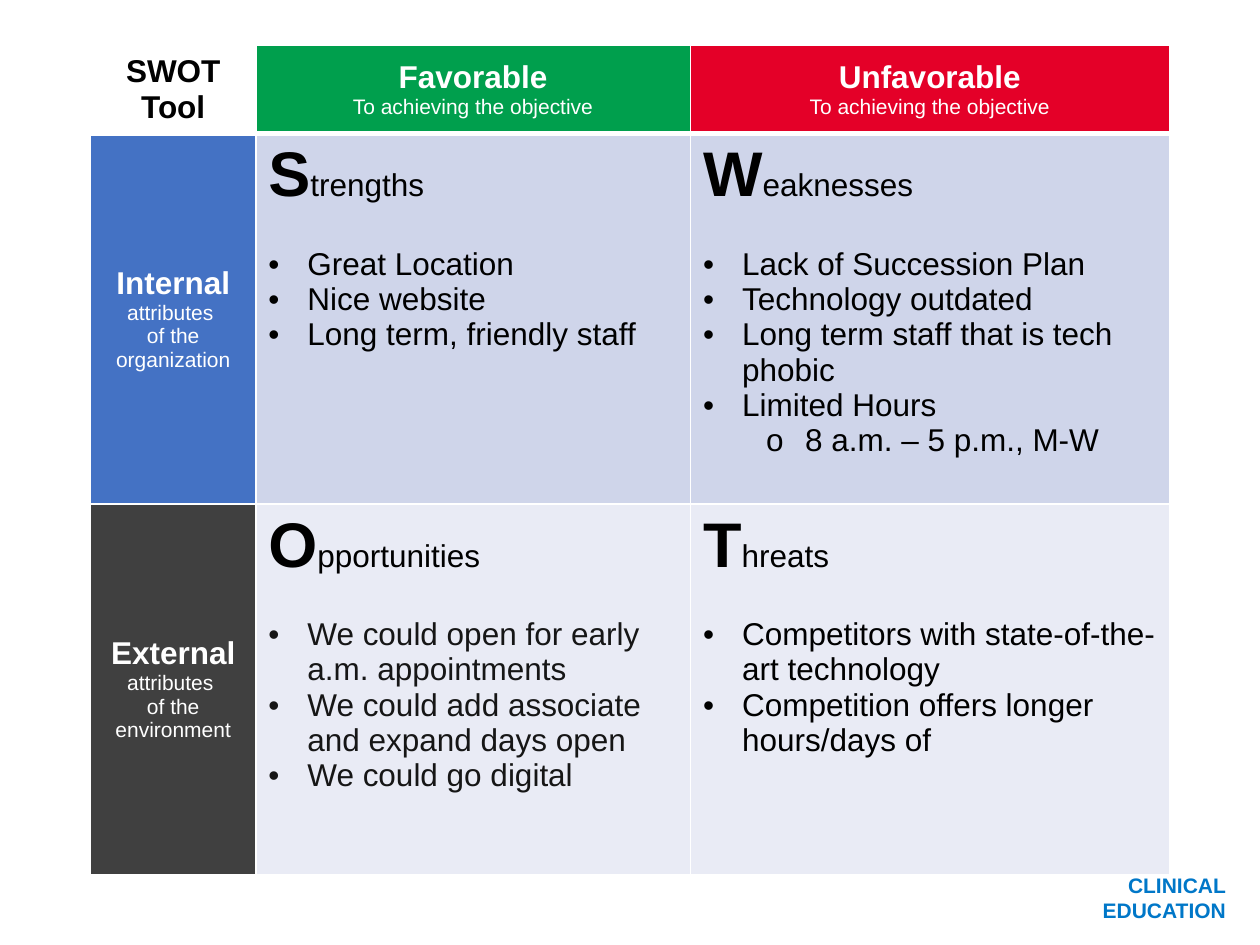
from lxml import etree
from pptx import Presentation
from pptx.dml.color import RGBColor
from pptx.enum.text import MSO_ANCHOR, PP_ALIGN
from pptx.oxml.ns import qn
from pptx.util import Inches, Pt

CENTER, RIGHT = PP_ALIGN.CENTER, PP_ALIGN.RIGHT
MIDDLE = MSO_ANCHOR.MIDDLE
BLANK_LAYOUT = 6
FONT = "Arial"
COLORS = {
    "white": "FFFFFF", "black": "000000", "ink": "161616",
    "green": "009F4D", "red": "E40028", "blue": "4472C4", "gray": "404040",
    "internal": "CFD5EA", "external": "E9EBF5", "footer": "0077C8",
}
COLUMN_WIDTHS = [1.31, 3.45, 3.8]
ROW_HEIGHTS = [0.68, 2.94, 2.94]
HEADERS = [
    (0, 1, "Favorable", "To achieving the objective", "green"),
    (0, 2, "Unfavorable", "To achieving the objective", "red"),
    (1, 0, "Internal", "attributes \vof the organization", "blue"),
    (2, 0, "External", "attributes \vof the environment", "gray"),
]
QUADRANTS = [
    (1, 1, "Strengths", "internal", "black", [
        (0, "Great Location"),
        (0, "Nice website"),
        (0, "Long term, friendly staff"),
    ]),
    (1, 2, "Weaknesses", "internal", "black", [
        (0, "Lack of Succession Plan"),
        (0, "Technology outdated"),
        (0, "Long term staff that is tech phobic"),
        (0, "Limited Hours"),
        (1, "8 a.m. – 5 p.m., M-W"),
    ]),
    (2, 1, "Opportunities", "external", "ink", [
        (0, "We could open for early a.m. appointments"),
        (0, "We could add associate and expand days open"),
        (0, "We could go digital"),
    ]),
    (2, 2, "Threats", "external", "black", [
        (0, "Competitors with state-of-the-art technology"),
        (0, "Competition offers longer hours/days of"),
    ]),
]


def rgb(name):
    """Return the named color."""
    return RGBColor.from_string(COLORS[name])


def format_run(run, size, color, bold=False):
    """Set the font of a run."""
    run.font.name = FONT
    run.font.size = Pt(size)
    run.font.bold = bold
    run.font.color.rgb = rgb(color)


def write_paragraph(paragraph, text, size, color, bold=False, align=None):
    """Fill a paragraph and format its runs and line breaks."""
    paragraph.text = text
    paragraph.alignment = align
    for run in paragraph.runs:
        format_run(run, size, color, bold)
    for line_break in paragraph._p.findall(qn("a:br")):
        etree.SubElement(line_break, qn("a:rPr"), sz=str(size * 100))


def add_bullet(paragraph, level):
    """Give a paragraph a hanging bullet for its level."""
    paragraph.level = level
    properties = paragraph._p.get_or_add_pPr()
    properties.set("marL", str(Inches(0.31 + 0.5 * level)))
    properties.set("indent", str(-Inches(0.31)))
    etree.SubElement(properties, qn("a:buFont"), typeface=FONT)
    etree.SubElement(properties, qn("a:buChar"), char="•o"[level])


def style_cell(cell, row):
    """Draw white borders, thicker below the header row."""
    properties = cell._tc.get_or_add_tcPr()
    widths = {"L": 1, "R": 1, "T": 3 if row == 1 else 1, "B": 3 if row == 0 else 1}
    for side, width in widths.items():
        line = etree.SubElement(properties, qn(f"a:ln{side}"), w=str(Pt(width)))
        fill = etree.SubElement(line, qn("a:solidFill"))
        etree.SubElement(fill, qn("a:srgbClr"), val=COLORS["white"])


def fill_cell(cell, color):
    """Fill a cell with a named color."""
    cell.fill.solid()
    cell.fill.fore_color.rgb = rgb(color)


def write_header(cell, title, caption, color):
    """Write a centered title and caption on a colored cell."""
    fill_cell(cell, color)
    cell.vertical_anchor = MIDDLE
    frame = cell.text_frame
    write_paragraph(frame.paragraphs[0], title, 18, "white", True, CENTER)
    write_paragraph(frame.add_paragraph(), caption, 12, "white", align=CENTER)


def write_quadrant(cell, title, fill, color, items):
    """Write a heading with a large initial and its bullet list."""
    fill_cell(cell, fill)
    heading = cell.text_frame.paragraphs[0]
    heading.space_after = Pt(20.7)
    for text, size, bold in ((title[0], 36, True), (title[1:], 18, False)):
        run = heading.add_run()
        run.text = text
        format_run(run, size, "black", bold)
    for level, text in items:
        paragraph = cell.text_frame.add_paragraph()
        write_paragraph(paragraph, text, 18, color)
        add_bullet(paragraph, level)


def add_swot_table(slide):
    """Add the SWOT grid."""
    table = slide.shapes.add_table(
        len(ROW_HEIGHTS), len(COLUMN_WIDTHS), Inches(0.72), Inches(0.36),
        Inches(sum(COLUMN_WIDTHS)), Inches(sum(ROW_HEIGHTS))).table
    for column, width in zip(table.columns, COLUMN_WIDTHS):
        column.width = Inches(width)
    for index, (row, height) in enumerate(zip(table.rows, ROW_HEIGHTS)):
        row.height = Inches(height)
        for cell in row.cells:
            style_cell(cell, index)
    corner = table.cell(0, 0)
    corner.fill.background()
    corner.vertical_anchor = MIDDLE
    write_paragraph(corner.text_frame.paragraphs[0], "SWOT Tool", 18, "black", True, CENTER)
    for row, column, *content in HEADERS:
        write_header(table.cell(row, column), *content)
    for row, column, *content in QUADRANTS:
        write_quadrant(table.cell(row, column), *content)


def add_footer(slide):
    """Add the department name at the bottom right."""
    box = slide.shapes.add_textbox(Inches(5.12), Inches(6.92), Inches(4.61), Inches(0.41))
    frame = box.text_frame
    frame.word_wrap = True
    frame.vertical_anchor = MIDDLE
    frame.margin_left = frame.margin_top = frame.margin_right = frame.margin_bottom = 0
    write_paragraph(frame.paragraphs[0], "CLINICAL", 12, "footer", True, RIGHT)
    write_paragraph(frame.add_paragraph(), "EDUCATION", 12, "footer", True, RIGHT)


def main():
    """Build the SWOT slide."""
    presentation = Presentation()
    presentation.slide_width = Inches(10)
    presentation.slide_height = Inches(7.5)
    slide = presentation.slides.add_slide(presentation.slide_layouts[BLANK_LAYOUT])
    add_footer(slide)
    add_swot_table(slide)
    presentation.save("out.pptx")


if __name__ == "__main__":
    main()
